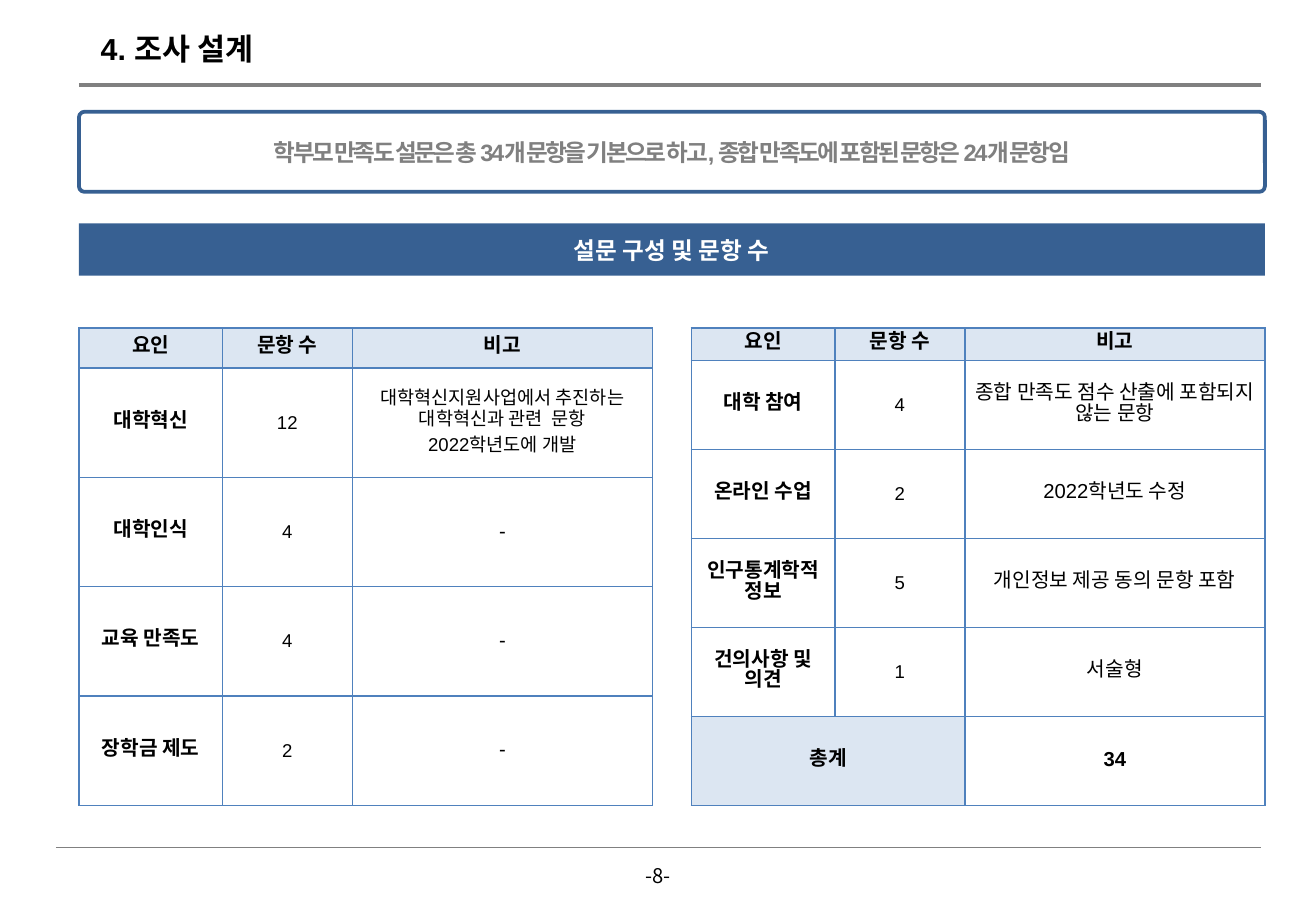
from dataclasses import dataclass

from lxml.etree import SubElement
from pptx import Presentation
from pptx.dml.color import RGBColor
from pptx.enum.shapes import MSO_CONNECTOR, MSO_SHAPE
from pptx.enum.text import MSO_ANCHOR, PP_ALIGN
from pptx.oxml import parse_xml
from pptx.oxml.ns import nsdecls, qn
from pptx.util import Inches, Pt


@dataclass(frozen=True)
class Theme:
    black: str = "000000"
    gray: str = "808080"
    white: str = "FFFFFF"
    navy: str = "376092"
    border: str = "4F81BD"
    pale: str = "DCE6F2"
    font: str = "Arial"
    banner_font: str = "Times New Roman"
    page_font: str = "Noto Sans CJK KR"
    title_size: float = 18
    lead_size: float = 14
    cell_size: float = 12
    small_size: float = 11
    cell_leading: float = 12.4


THEME = Theme()


@dataclass(frozen=True)
class Style:
    size: float
    color: str = THEME.black
    bold: bool = False
    font: str = THEME.font
    align: PP_ALIGN = PP_ALIGN.CENTER
    tracking: float = 0
    leading: float | None = None
    space_before: float = 0


@dataclass(frozen=True)
class Area:
    left: float
    top: float
    width: float
    height: float

    def lengths(self):
        return tuple(map(Inches, (self.left, self.top, self.width, self.height)))


@dataclass(frozen=True)
class Rule:
    left: float
    top: float
    width: float


@dataclass(frozen=True)
class Factor:
    name: str
    count: str
    note: str
    note_size: float = THEME.cell_size


@dataclass(frozen=True)
class FactorTable:
    left: float
    header_height: float
    factors: tuple[Factor, ...]
    total: str = ""


RIGHT = 10.38
RULES = (Rule(0.65, 0.7, 2), Rule(0.46, 6.98, 0.5))
HEADERS = ("요인", "문항 수", "비고")
COLUMNS = (1.18, 1.07, 2.47)
TABLE_TOP, TABLE_HEIGHT = 2.7, 3.93
TABLES = (
    FactorTable(0.65, 0.33, (
        Factor("대학혁신", "12",
               "대학혁신지원사업에서 추진하는 대학혁신과 관련  문항\n2022학년도에 개발",
               THEME.small_size),
        Factor("대학인식", "4", "-"),
        Factor("교육 만족도", "4", "-"),
        Factor("장학금 제도", "2", "-"),
    )),
    FactorTable(5.69, 0.27, (
        Factor("대학 참여", "4", "종합 만족도 점수 산출에 포함되지 않는 문항"),
        Factor("온라인 수업", "2", "2022학년도 수정"),
        Factor("인구통계학적 정보", "5", "개인정보 제공 동의 문항 포함"),
        Factor("건의사항 및 의견", "1", "서술형"),
    ), total="34"),
)


def rgb(color: str) -> RGBColor:
    return RGBColor.from_string(color)


def write(frame, text: str, style: Style) -> None:
    frame.text = text
    for index, paragraph in enumerate(frame.paragraphs):
        paragraph.alignment = style.align
        if style.leading:
            paragraph.line_spacing = Pt(style.leading)
        if index and style.space_before:
            paragraph.space_before = Pt(style.space_before)
        font = paragraph.font
        font.name, font.size, font.bold = style.font, Pt(style.size), style.bold
        font.color.rgb = rgb(style.color)
        if style.tracking:
            defaults = paragraph._p.pPr.find(qn("a:defRPr"))
            defaults.set("spc", str(int(style.tracking * 100)))


def add_rule(page, rule: Rule) -> None:
    line = page.shapes.add_connector(
        MSO_CONNECTOR.STRAIGHT, Inches(rule.left), Inches(rule.top),
        Inches(RIGHT), Inches(rule.top))
    line.line.color.rgb = rgb(THEME.gray)
    line.line.width = Pt(rule.width)
    SubElement(line._element.spPr, qn("a:effectLst"))


def add_text(page, area: Area, text: str, style: Style) -> None:
    frame = page.shapes.add_textbox(*area.lengths()).text_frame
    frame.word_wrap = True
    write(frame, text, style)


def add_panel(page, kind: MSO_SHAPE, area: Area, text: str, style: Style):
    box = page.shapes.add_shape(kind, *area.lengths())
    box.shadow.inherit = False
    box.text_frame.word_wrap = True
    box.text_frame.vertical_anchor = MSO_ANCHOR.MIDDLE
    write(box.text_frame, text, style)
    return box


def add_borders(cell) -> None:
    properties = cell._tc.get_or_add_tcPr()
    for index, side in enumerate(("lnL", "lnR", "lnT", "lnB")):
        properties.insert(index, parse_xml(
            f'<a:{side} {nsdecls("a")} w="{Pt(1)}"><a:solidFill>'
            f'<a:srgbClr val="{THEME.border}"/></a:solidFill></a:{side}>'))


def fill_cell(cell, text: str, size: float, bold: bool, shaded: bool) -> None:
    cell.vertical_anchor = MSO_ANCHOR.MIDDLE
    cell.margin_left = cell.margin_right = Inches(0.04)
    cell.margin_top = cell.margin_bottom = Inches(0.02)
    if shaded:
        cell.fill.solid()
        cell.fill.fore_color.rgb = rgb(THEME.pale)
    else:
        cell.fill.background()
    add_borders(cell)
    write(cell.text_frame, text, Style(
        size, bold=bold, leading=THEME.cell_leading, space_before=3))


def add_factor_table(page, data: FactorTable) -> None:
    body_count = len(data.factors) + bool(data.total)
    area = Area(data.left, TABLE_TOP, sum(COLUMNS), TABLE_HEIGHT)
    table = page.shapes.add_table(body_count + 1, len(COLUMNS), *area.lengths()).table
    table.first_row = table.horz_banding = False
    for column, width in zip(table.columns, COLUMNS):
        column.width = Inches(width)
    row_height = (TABLE_HEIGHT - data.header_height) / body_count
    for index, row in enumerate(table.rows):
        row.height = Inches(row_height if index else data.header_height)

    normal, small = THEME.cell_size, THEME.small_size
    rows = [[(header, normal, True, True) for header in HEADERS]]
    for factor in data.factors:
        rows.append([(factor.name, normal, True, False),
                     (factor.count, small, False, False),
                     (factor.note, factor.note_size, False, False)])
    if data.total:
        rows.append([("총계", normal, True, True), ("", normal, True, True),
                     (data.total, normal, True, False)])
    for row, values in enumerate(rows):
        for column, value in enumerate(values):
            fill_cell(table.cell(row, column), *value)
    if data.total:
        table.cell(body_count, 0).merge(table.cell(body_count, 1))


def main() -> None:
    deck = Presentation()
    deck.slide_width, deck.slide_height = Inches(10.83), Inches(7.5)
    page = deck.slides.add_slide(deck.slide_layouts[6])
    for rule in RULES:
        add_rule(page, rule)
    add_text(page, Area(0.73, 0.2, 1.6, 0.4), "4. 조사 설계",
             Style(THEME.title_size, bold=True, align=PP_ALIGN.LEFT))
    add_text(page, Area(5.14, 7.06, 0.55, 0.3), "-8-",
             Style(THEME.cell_size, font=THEME.page_font))

    summary = add_panel(
        page, MSO_SHAPE.ROUNDED_RECTANGLE, Area(0.65, 0.92, 9.76, 0.66),
        "학부모 만족도 설문은 총 34개 문항을 기본으로 하고, 종합 만족도에 포함된 문항은 24개 문항임",
        Style(THEME.lead_size, THEME.gray, True, tracking=-1.5))
    summary.adjustments[0] = 0.07
    summary.fill.background()
    summary.line.color.rgb = rgb(THEME.navy)
    summary.line.width = Pt(2.25)

    banner = add_panel(
        page, MSO_SHAPE.RECTANGLE, Area(0.65, 1.84, 9.76, 0.43), "설문 구성 및 문항 수",
        Style(THEME.lead_size, THEME.white, True, THEME.banner_font))
    banner.fill.solid()
    banner.fill.fore_color.rgb = rgb(THEME.navy)
    banner.line.fill.background()

    for data in TABLES:
        add_factor_table(page, data)
    deck.save("out.pptx")


if __name__ == "__main__":
    main()
